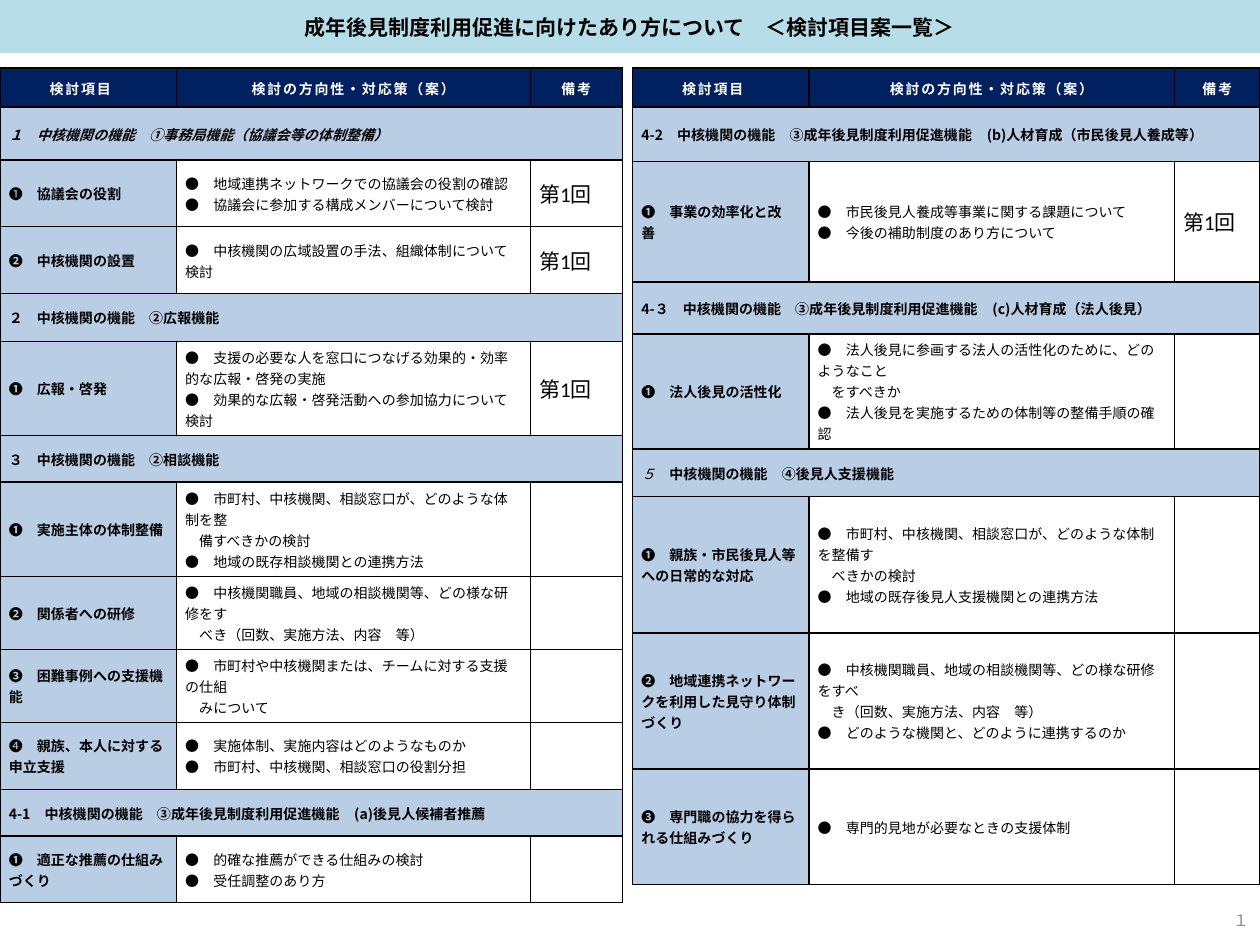
from lxml import etree
from pptx import Presentation
from pptx.dml.color import RGBColor
from pptx.enum.shapes import MSO_SHAPE
from pptx.enum.text import MSO_ANCHOR, PP_ALIGN
from pptx.oxml.ns import qn
from pptx.util import Inches, Pt

RECT = MSO_SHAPE.RECTANGLE
MIDDLE = MSO_ANCHOR.MIDDLE
LEFT, CENTER, RIGHT = PP_ALIGN.LEFT, PP_ALIGN.CENTER, PP_ALIGN.RIGHT
SANS = "Noto Sans CJK JP"
NAVY, BLUE, AQUA = "002060", "B9CDE5", "B7DEE8"
WHITE, BLACK, GRAY = "FFFFFF", "000000", "8C8C8C"

PLAIN = {"name": SANS, "size": Pt(8), "bold": False}
BOLD = {**PLAIN, "bold": True}
SLANT = {**PLAIN, "italic": True}
BOTH = {**BOLD, "italic": True}
NOTE = {**PLAIN, "name": "Calibri", "size": Pt(12)}
TITLE = {**BOLD, "size": Pt(12)}
PAGE = {**NOTE, "size": Pt(9)}
CELL = {
    "vertical_anchor": MIDDLE,
    "margin_left": Inches(0.07), "margin_right": Inches(0.07),
    "margin_top": Inches(0.04), "margin_bottom": Inches(0.04),
}

HEADS = ["検討項目　", "検討の方向性・対応策（案）", "備考"]
FIRST = "第1回"

LEFT_ROWS = [
    (0.42, [("１　中核機関の機能　①事務局機能（協議会等の体制整備）", BOTH)]),
    (0.53, [("❶　", PLAIN), ("協議会の役割", BOLD)],
     ["●　地域連携ネットワークでの協議会の役割の確認",
      "●　協議会に参加する構成メンバーについて検討"], FIRST),
    (0.53, "❷　中核機関の設置",
     ["●　中核機関の広域設置の手法、組織体制について検討"], FIRST),
    (0.38, "２　中核機関の機能　②広報機能"),
    (0.71, "❶　広報・啓発",
     ["●　支援の必要な人を窓口につなげる効果的・効率的な広報・啓発の実施",
      "●　効果的な広報・啓発活動への参加協力について検討"], FIRST),
    (0.37, "３　中核機関の機能　②相談機能"),
    (0.75, "❶　実施主体の体制整備",
     ["●　市町村、中核機関、相談窓口が、どのような体制を整",
      "　備すべきかの検討",
      "●　地域の既存相談機関との連携方法"], ""),
    (0.53, "❷　関係者への研修",
     ["●　中核機関職員、地域の相談機関等、どの様な研修をす",
      "　べき（回数、実施方法、内容　等）"], ""),
    (0.53, "❸　困難事例への支援機能",
     ["●　市町村や中核機関または、チームに対する支援の仕組",
      "　みについて"], ""),
    (0.53, [("➍　", PLAIN), ("親族、本人に対する申立支援", BOLD)],
     ["●　実施体制、実施内容はどのようなものか",
      "●　市町村、中核機関、相談窓口の役割分担"], ""),
    (0.37, "4-1　中核機関の機能　③成年後見制度利用促進機能　(a)後見人候補者推薦"),
    (0.53, "❶　適正な推薦の仕組みづくり",
     ["●　的確な推薦ができる仕組みの検討",
      "●　受任調整のあり方"], ""),
]

RIGHT_ROWS = [
    (0.43, "4-2　中核機関の機能　③成年後見制度利用促進機能　(b)人材育成（市民後見人養成等）"),
    (0.96, "❶　事業の効率化と改善　",
     ["●　市民後見人養成等事業に関する課題について",
      "●　今後の補助制度のあり方について"], FIRST),
    (0.41, "4-３　中核機関の機能　③成年後見制度利用促進機能　(c)人材育成（法人後見）"),
    (0.91, "❶　法人後見の活性化",
     ["●　法人後見に参画する法人の活性化のために、どのようなこと",
      "　をすべきか",
      "●　法人後見を実施するための体制等の整備手順の確認"], ""),
    (0.38, [("５　", SLANT), ("中核機関の機能　④後見人支援機能", BOLD)]),
    (1.08, "❶　親族・市民後見人等への日常的な対応",
     ["●　市町村、中核機関、相談窓口が、どのような体制を整備す",
      "　べきかの検討",
      "●　地域の既存後見人支援機関との連携方法"], ""),
    (1.08, "❷　地域連携ネットワークを利用した見守り体制づくり",
     ["●　中核機関職員、地域の相談機関等、どの様な研修をすべ",
      "　き（回数、実施方法、内容　等）",
      "●　どのような機関と、どのように連携するのか"], ""),
    (0.92, "❸　専門職の協力を得られる仕組みづくり",
     ["●　専門的見地が必要なときの支援体制"], ""),
]


def tint(color, code):
    color.rgb = RGBColor.from_string(code)


def apply(item, values):
    for key, value in values.items():
        setattr(item, key, value)


def write(frame, lines, align=LEFT, pitch=None, code=BLACK, gap=0):
    for num, runs in enumerate(lines):
        para = frame.add_paragraph() if num else frame.paragraphs[0]
        apply(para, {"alignment": align, "line_spacing": pitch})
        for text, form in runs:
            run = para.add_run()
            run.text = text
            apply(run.font, form)
            tint(run.font.color, code)
            props = run.font._element
            etree.SubElement(props, qn("a:ea")).set("typeface", SANS)
            if gap:
                props.set("spc", str(gap))


def edge(cell, top, base):
    props = cell._tc.get_or_add_tcPr()
    sides = {"L": 1, "R": 1, "T": top, "B": base}
    for num, (side, width) in enumerate(sides.items()):
        line = etree.Element(qn("a:ln" + side), w=str(Pt(width)))
        fill = etree.SubElement(line, qn("a:solidFill"))
        etree.SubElement(fill, qn("a:srgbClr"), val=BLACK)
        props.insert(num, line)


def banner(slide, left, top, width, height):
    box = slide.shapes.add_shape(RECT, left, top, width, height)
    box.shadow.inherit = False
    box.fill.solid()
    tint(box.fill.fore_color, AQUA)
    box.line.fill.background()
    apply(box.text_frame, {**CELL, "word_wrap": False})
    text = "成年後見制度利用促進に向けたあり方について　＜検討項目案一覧＞"
    write(box.text_frame, [[(text, TITLE)]], CENTER, Pt(15))


def grid(slide, left, top, cols, rows, thick):
    high = [0.31] + [row[0] for row in rows]
    table = slide.shapes.add_table(
        len(high), len(cols), left, top,
        Inches(sum(cols)), Inches(sum(high))).table
    apply(table, {"first_row": False, "horz_banding": False})
    for col, width in zip(table.columns, cols):
        col.width = Inches(width)
    for num, height in enumerate(high):
        table.rows[num].height = Inches(height)
        weights = [1.5 if step < thick else 1 for step in (num, num + 1)]
        part = num and len(rows[num - 1]) == 2
        for col in range(len(cols)):
            cell = table.cell(num, col)
            apply(cell, CELL)
            cell.fill.solid()
            shade = BLUE if part or col == 0 else WHITE
            tint(cell.fill.fore_color, shade if num else NAVY)
            edge(cell, *weights)
        if part:
            table.cell(num, 0).merge(table.cell(num, len(cols) - 1))

    for col, text in enumerate(HEADS):
        write(table.cell(0, col).text_frame, [[(text, BOLD)]],
              CENTER, Pt(12), WHITE, 100)
    for num, (_, label, *rest) in enumerate(rows, 1):
        runs = [(label, BOLD)] if isinstance(label, str) else label
        write(table.cell(num, 0).text_frame, [runs], pitch=Pt(12))
        if rest:
            points, note = rest
            write(table.cell(num, 1).text_frame,
                  [[(text, PLAIN)] for text in points], pitch=Pt(12))
            if note:
                write(table.cell(num, 2).text_frame, [[(note, NOTE)]])


def footer(slide, left, top, width, height):
    frame = slide.shapes.add_textbox(left, top, width, height).text_frame
    apply(frame, {"word_wrap": True, "vertical_anchor": MIDDLE})
    write(frame, [[("１", PAGE)]], RIGHT, code=GRAY)


def main():
    deck = Presentation()
    apply(deck, {"slide_width": Inches(10), "slide_height": Inches(7.5)})
    slide = deck.slides.add_slide(deck.slide_layouts[6])
    banner(slide, 0, 0, Inches(10), Inches(0.42))
    grid(slide, 0, Inches(0.54), [1.4, 2.81, 0.73], LEFT_ROWS, 3)
    footer(slide, Inches(7.68), Inches(7.1), Inches(2.33), Inches(0.4))
    grid(slide, Inches(5.02), Inches(0.54), [1.4, 2.9, 0.68], RIGHT_ROWS, 2)
    deck.save("out.pptx")


if __name__ == "__main__":
    main()
